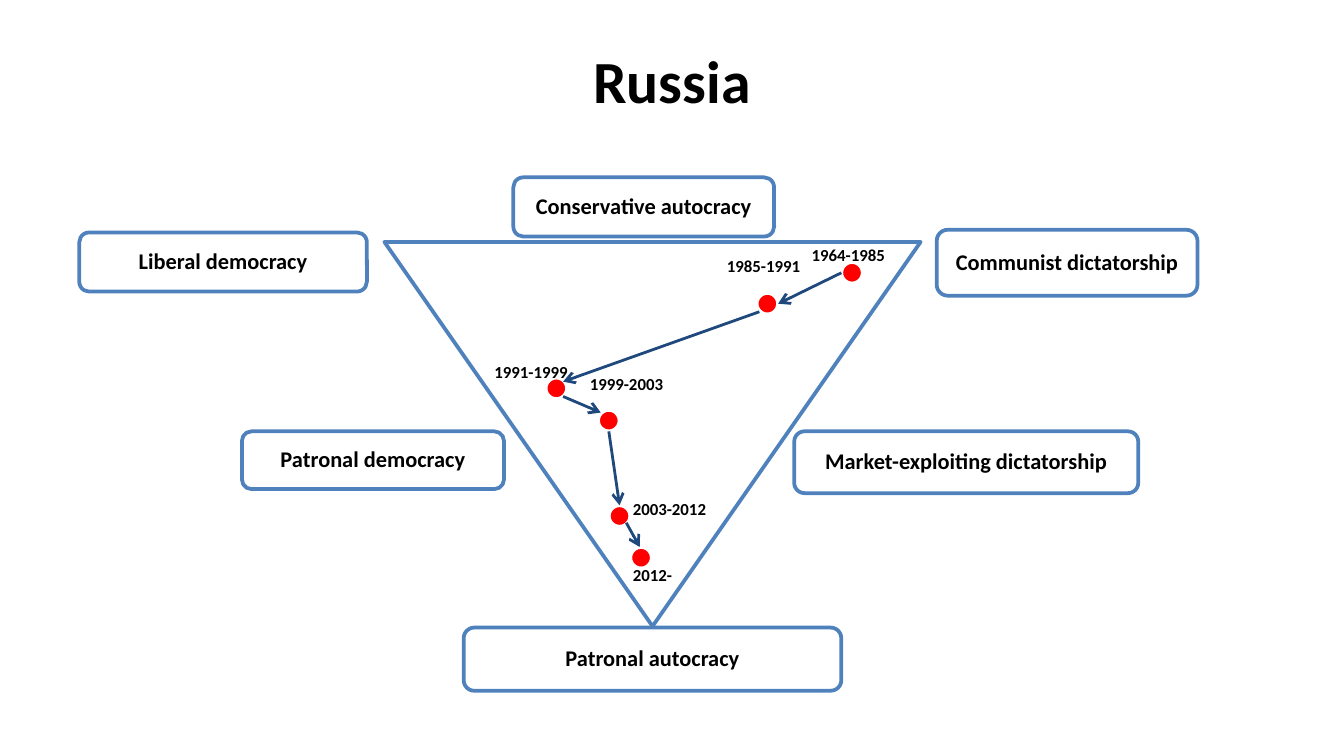
"""Builds the slide tracing Russia's regime path inside the triangle of regime types."""
from lxml.etree import SubElement
from pptx import Presentation
from pptx.dml.color import RGBColor
from pptx.enum.shapes import MSO_CONNECTOR, MSO_SHAPE
from pptx.enum.text import MSO_ANCHOR, PP_ALIGN
from pptx.oxml.ns import qn
from pptx.util import Inches, Pt

FONT = "Calibri"
COLORS = {"text": "000000", "paper": "FFFFFF", "frame": "4F81BD", "dot": "FF0000", "arrow": "1F497D"}
TITLE = "Russia"
TRIANGLE = (2.86, 1.8, 3.99, 2.86)
REGIMES = [
    ("Communist dictatorship", (6.97, 1.71, 1.94, 0.49)),
    ("Liberal democracy", (0.59, 1.73, 2.14, 0.44)),
    ("Patronal autocracy", (3.45, 4.67, 2.81, 0.47)),
    ("Conservative autocracy", (3.82, 1.32, 1.94, 0.44)),
    ("Market-exploiting dictatorship", (5.91, 3.21, 2.56, 0.46)),
    ("Patronal democracy", (1.8, 3.21, 1.95, 0.43)),
]
PERIODS = [
    ("1964-1985", (6.26, 1.95), (5.94, 1.77)),
    ("1985-1991", (5.63, 2.18), (5.31, 1.85)),
    ("1991-1999", (4.06, 2.81), (3.58, 2.64)),
    ("1999-2003", (4.45, 3.05), (4.29, 2.73)),
    ("2003-2012", (4.53, 3.76), (4.61, 3.66)),
    ("2012-", (4.69, 4.07), (4.61, 4.15)),
]
TRANSITIONS = [
    ((6.26, 2.03), (5.79, 2.26)),
    ((5.65, 2.32), (4.19, 2.84)),
    ((4.19, 2.95), (4.47, 3.07)),
    ((4.53, 3.21), (4.61, 3.76)),
    ((4.66, 3.89), (4.76, 4.07)),
]
SLIDE_WIDTH = 10
SLIDE_HEIGHT = SLIDE_WIDTH * 9 / 16
DOT_SIZE = (0.16, 0.16)
LABEL_SIZE = (1.02, 0.25)


def inches(values):
    return [Inches(value) for value in values]


def color(name):
    return RGBColor.from_string(COLORS[name])


def write(frame, wording, size, align):
    frame.text = wording
    paragraph = frame.paragraphs[0]
    paragraph.alignment = align
    font = paragraph.runs[0].font
    font.name, font.size, font.bold = FONT, Pt(size), True
    font.color.rgb = color("text")
    return paragraph


def add_outlined(slide, kind, box, outline, fill=None):
    shape = slide.shapes.add_shape(kind, *inches(box))
    shape.shadow.inherit = False
    shape.line.color.rgb = color(outline)
    shape.line.width = Pt(2)
    if fill:
        shape.fill.solid()
        shape.fill.fore_color.rgb = color(fill)
    else:
        shape.fill.background()
    return shape


def add_regime(slide, name, box):
    regime = add_outlined(slide, MSO_SHAPE.ROUNDED_RECTANGLE, box, "frame", "paper")
    tint = regime._element.spPr.find(qn("a:solidFill"))[0]
    SubElement(tint, qn("a:alpha"), val="90000")
    frame = regime.text_frame
    frame.word_wrap = True
    frame.vertical_anchor = MSO_ANCHOR.MIDDLE
    frame.margin_left = frame.margin_right = frame.margin_top = frame.margin_bottom = Inches(0.05)
    write(frame, name, 12, PP_ALIGN.CENTER).line_spacing = 0.9


def add_transition(slide, start, end):
    arrow = slide.shapes.add_connector(MSO_CONNECTOR.STRAIGHT, *inches(start + end))
    arrow.line.color.rgb = color("arrow")
    arrow.line.width = Pt(1.5)
    properties = arrow._element.spPr
    SubElement(properties.find(qn("a:ln")), qn("a:tailEnd"), type="arrow")
    SubElement(properties, qn("a:effectLst"))


def add_period_label(slide, period, corner):
    label = slide.shapes.add_textbox(*inches(corner + LABEL_SIZE))
    label.text_frame.word_wrap = True
    write(label.text_frame, period, 9, PP_ALIGN.LEFT)


def main():
    deck = Presentation()
    deck.slide_width, deck.slide_height = inches((SLIDE_WIDTH, SLIDE_HEIGHT))
    slide = deck.slides.add_slide(deck.slide_layouts[5])

    title = slide.shapes.title
    title.left, title.top, title.width, title.height = inches((0, 0.21, SLIDE_WIDTH, 0.77))
    title.text_frame.vertical_anchor = MSO_ANCHOR.MIDDLE
    write(title.text_frame, TITLE, 32, PP_ALIGN.CENTER)

    triangle = add_outlined(slide, MSO_SHAPE.ISOSCELES_TRIANGLE, TRIANGLE, "frame")
    triangle.rotation = 180
    for name, box in REGIMES:
        add_regime(slide, name, box)
    for _, corner, _ in PERIODS:
        add_outlined(slide, MSO_SHAPE.OVAL, corner + DOT_SIZE, "paper", "dot")
    for start, end in TRANSITIONS:
        add_transition(slide, start, end)
    for period, _, corner in PERIODS:
        add_period_label(slide, period, corner)

    deck.save("out.pptx")


if __name__ == "__main__":
    main()
